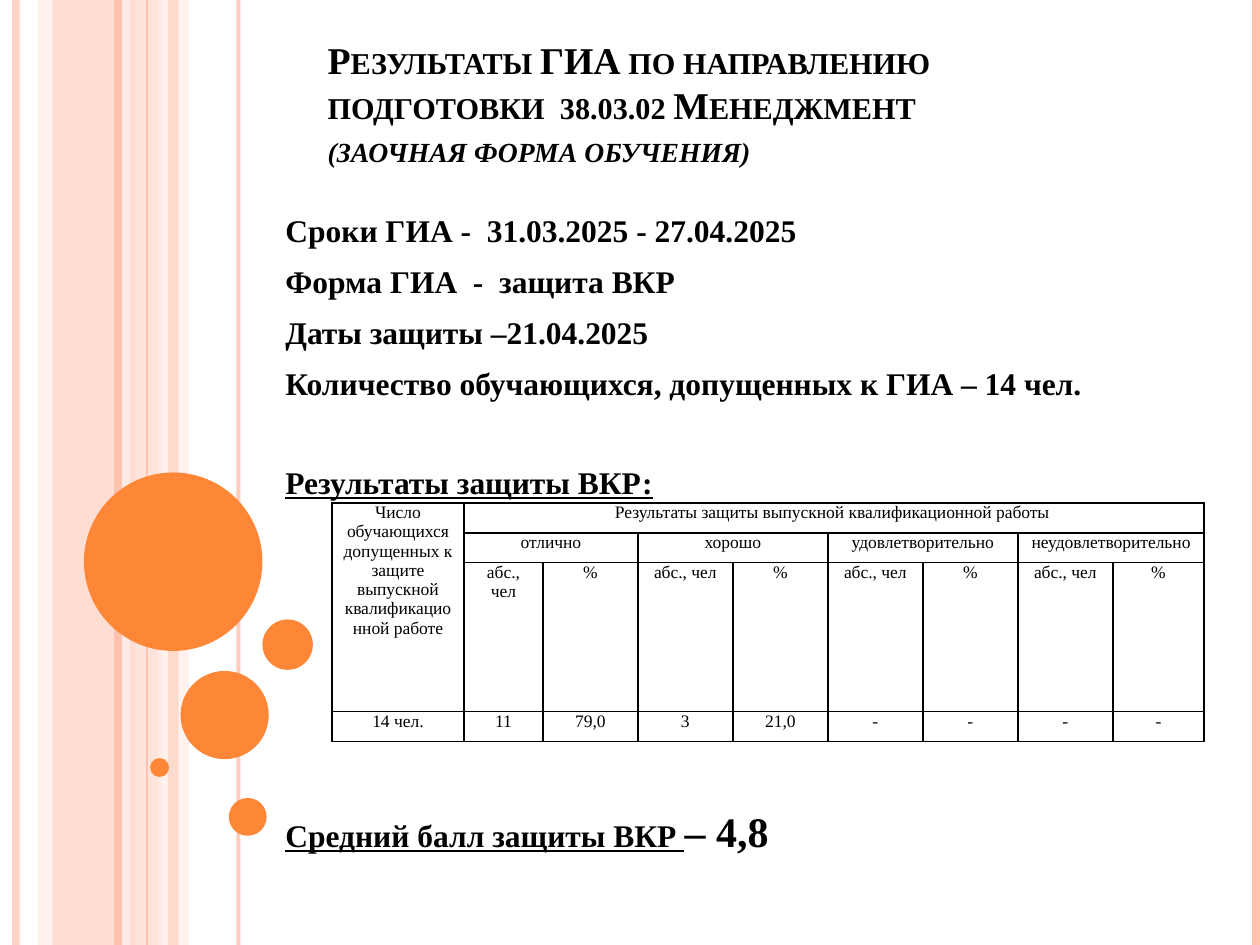
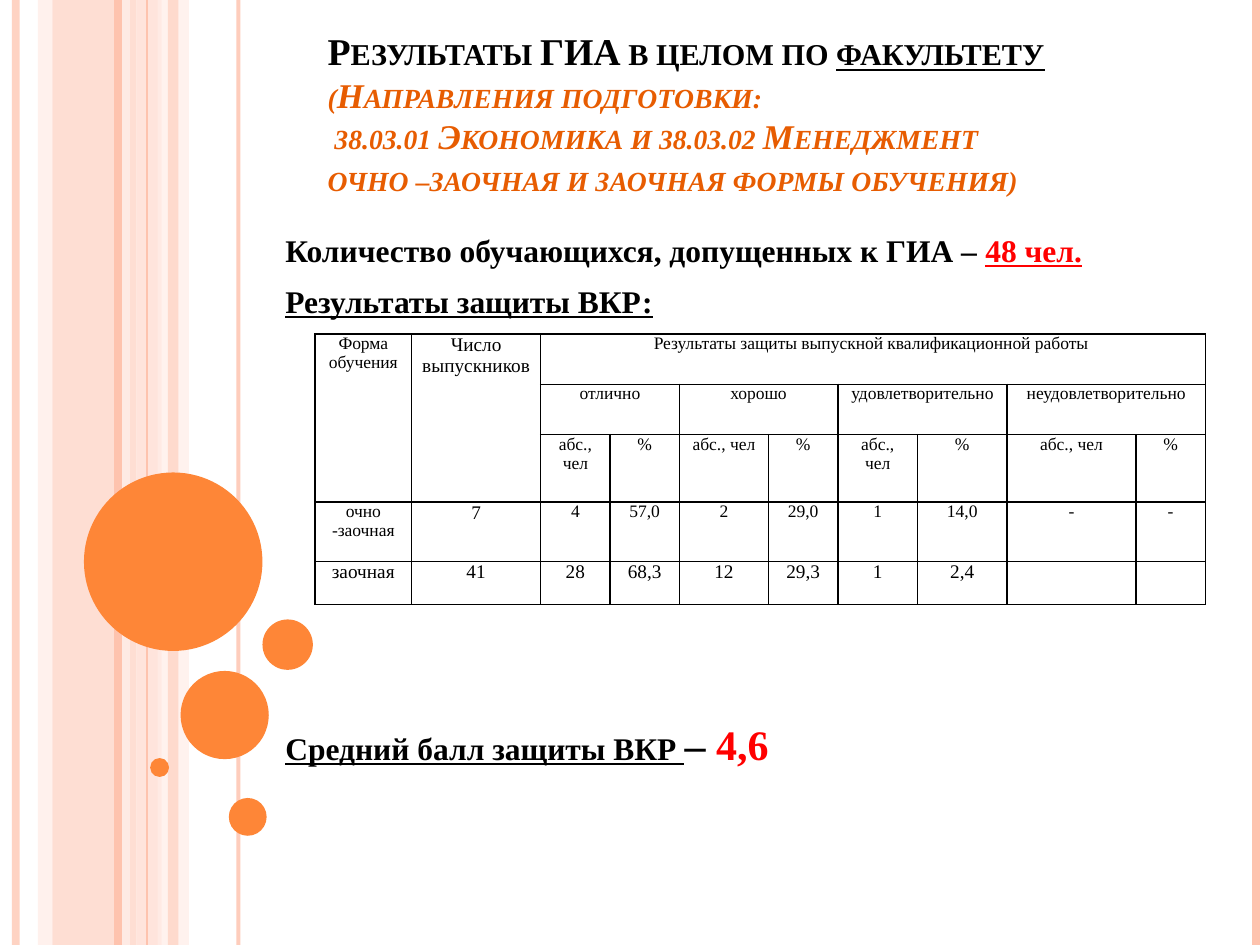
import pptx
import pptx.dml.color
import pptx.enum.shapes
import pptx.enum.text
import pptx.oxml
import pptx.oxml.ns
import pptx.util

COLS, ROWS = 120, 90
FONT = "Times New Roman"
BLACK, RED, RUST, ORANGE = "000000", "FF0000", "E75C01", "FE8637"
PEACH, PINK, PALE = "FEC3AE", "FFD9CE", "FFEDE8"

BANDS = [(5, 8, PEACH, 54), (3.6, 1.4, PINK, 36), (13, 2.4, PINK, 70), (15, 3, PALE, 71)]
RULES = [(1.5, 4.5, PEACH, 73), (12, 4.5, PALE, 83), (11.2, 4.5, PEACH, 100),
         (22.7, 2.25, PEACH, 82), (14, 0.75, PEACH, 100), (119.6, 4.5, PEACH, 100)]
STRIP = (16, 1, PEACH, 51)
DOTS = [(8, 45, 17), (17.2, 63.9, 8.4), (14.3, 72.2, 1.8), (21.8, 76, 3.6), (25, 59, 4.8)]

HEAD = "Результаты защиты выпускной квалификационной работы "
GRADES = ["отлично", "хорошо", "удовлетворительно", "неудовлетворительно"]
PAIR = ["абс., чел", "%"]
FOUND = "Результаты защиты ВКР:"
MEAN = "Средний балл защиты ВКР "
LINE = {"under": True}
NOTE = {"size": 19.8, "italic": True}
SUB = {**NOTE, "color": RUST}


def shade(text):
    return pptx.dml.color.RGBColor.from_string(text)


def fade(shape, share):
    if share < 100:
        tint = shape.element.xpath("./p:spPr//a:srgbClr")[0]
        mark = pptx.oxml.parse_xml(
            f'<a:alpha {pptx.oxml.ns.nsdecls("a")} val="{share * 1000}"/>')
        tint.append(mark)


class Deck:
    def __init__(self):
        self.show = pptx.Presentation()
        self.show.slide_width = pptx.util.Inches(10)
        self.show.slide_height = pptx.util.Inches(7.5)
        self.base = self.show.slide_layouts[5]
        self.slide = None

    def x(self, cols):
        return round(self.show.slide_width * cols / COLS)

    def y(self, rows):
        return round(self.show.slide_height * rows / ROWS)

    def box(self, left, top, width, height):
        return self.x(left), self.y(top), self.x(width), self.y(height)

    def page(self):
        self.slide = self.show.slides.add_slide(self.base)

    def block(self, kind, place, color, share=100):
        shape = self.slide.shapes.add_shape(kind, *self.box(*place))
        shape.shadow.inherit = False
        shape.fill.solid()
        shape.fill.fore_color.rgb = shade(color)
        shape.line.fill.background()
        fade(shape, share)
        return shape

    def rule(self, left, width, color, share):
        line = self.slide.shapes.add_connector(
            pptx.enum.shapes.MSO_CONNECTOR.STRAIGHT,
            self.x(left), 0, self.x(left), self.y(ROWS))
        line.line.width = pptx.util.Pt(width)
        line.line.color.rgb = shade(color)
        fade(line, share)
        line.element.spPr.append(
            pptx.oxml.parse_xml(f'<a:effectLst {pptx.oxml.ns.nsdecls("a")}/>'))
        return line

    def scene(self):
        kinds = pptx.enum.shapes.MSO_SHAPE

        def band(left, width, color, share):
            return self.block(kinds.RECTANGLE, (left, 0, width, ROWS), color, share)

        parts = [band(*item) for item in BANDS]
        parts += [self.rule(*item) for item in RULES]
        parts.append(band(*STRIP))
        parts += [self.block(kinds.OVAL, (left, top, size, size), ORANGE)
                  for left, top, size in DOTS]
        tree = self.base.shapes.element
        for rank, part in enumerate(parts):
            part.element.xpath(".//p:cNvPr")[0].set("id", str(100 + rank))
            tree.insert(2 + rank, part.element)

    def run(self, para, text, size, color=BLACK, bold=True, italic=False, under=False):
        run = para.add_run()
        run.text = text
        font = run.font
        font.name = FONT
        font.size = pptx.util.Pt(size)
        font.color.rgb = shade(color)
        font.bold, font.italic, font.underline = bold, italic, under

    def prose(self, frame, lines, size, align, **look):
        for rank, (gap, runs) in enumerate(lines):
            para = frame.add_paragraph() if rank else frame.paragraphs[0]
            para.alignment = align
            para.space_before = pptx.util.Pt(gap)
            for text, extra in runs:
                self.run(para, text, **{"size": size, **look, **extra})

    def title(self, height, lines):
        shape = self.slide.shapes.title
        shape.left, shape.top, shape.width, shape.height = self.box(30, 2.5, 81, height)
        frame = shape.text_frame
        frame.word_wrap = True
        frame.auto_size = pptx.enum.text.MSO_AUTO_SIZE.NONE
        frame.vertical_anchor = pptx.enum.text.MSO_ANCHOR.BOTTOM
        frame.margin_right = self.x(4)
        self.prose(frame, [(0, runs) for runs in lines], 21.6,
                   pptx.enum.text.PP_ALIGN.LEFT)
        for look in shape.element.xpath(".//a:rPr"):
            look.set("cap", "small")

    def body(self, top, lines):
        shape = self.slide.shapes.add_textbox(*self.box(26, top, 91.6, 83.6 - top))
        shape.text_frame.word_wrap = True
        self.prose(shape.text_frame, lines, 18, pptx.enum.text.PP_ALIGN.LEFT)

    def table(self, left, top, cols, rows, cells, spans, sizes):
        frame = self.slide.shapes.add_table(
            len(rows), len(cols), *self.box(left, top, sum(cols), sum(rows)))
        table = frame.table
        table.first_row = table.horz_banding = False
        for col, width in zip(table.columns, cols):
            col.width = self.x(width)
        for row, height in zip(table.rows, rows):
            row.height = self.y(height)
        for r, c, down, over in spans:
            table.cell(r, c).merge(table.cell(r + down - 1, c + over - 1))
        for r, texts in enumerate(cells):
            for c, text in enumerate(texts):
                cell = table.cell(r, c)
                cell.margin_left = cell.margin_right = self.x(0.85)
                cell.margin_top = cell.margin_bottom = 0
                cell.fill.background()
                if text:
                    lines = [(0, [(part, {})]) for part in text.split("\n")]
                    self.prose(cell.text_frame, lines, sizes.get((r, c), 10),
                               pptx.enum.text.PP_ALIGN.CENTER, bold=False)
        for look in frame.element.xpath(".//a:tcPr"):
            for rank, side in enumerate("LRTB"):
                look.insert(rank, pptx.oxml.parse_xml(
                    f'<a:ln{side} {pptx.oxml.ns.nsdecls("a")} w="12700"><a:solidFill>'
                    f'<a:srgbClr val="{BLACK}"/></a:solidFill></a:ln{side}>'))

    def marks(self, left, top, cols, rows, heads, data, sizes):
        lead = len(heads)
        blank = [""] * lead
        grades = [text for grade in GRADES for text in (grade, "")]
        cells = [heads + [HEAD] + [""] * 7, blank + grades, blank + PAIR * 4] + data
        spans = [(0, c, 3, 1) for c in range(lead)] + [(0, lead, 1, 8)]
        spans += [(1, lead + 2 * n, 1, 2) for n in range(4)]
        self.table(left, top, cols, rows, cells, spans, sizes)


def main():
    deck = Deck()
    deck.page()
    deck.scene()
    deck.title(14.2, [
        [("Результаты ГИА по направлению подготовки  38.03.02 Менеджмент", {})],
        [("(заочная форма обучения)", NOTE)]])
    deck.body(19.5, [
        (0, [("Сроки ГИА -  31.03.2025 - 27.04.2025", {})]),
        (7.6, [("Форма ГИА  -  защита ВКР", {})]),
        (7.6, [("Даты защиты –21.04.2025", {})]),
        (7.6, [("Количество обучающихся, допущенных к ГИА – 14 чел.", {})]),
        (35, [(FOUND, LINE)]),
        (174, [(MEAN, LINE), ("– 4,8", {"size": 24})])])
    deck.marks(31.6, 47.9, [12.6, 7.5] + [9.05] * 6 + [8.7], [2.84, 2.84, 14.2, 2.84],
               ["Число обучающихся допущенных к защите выпускной квалификационной работе"],
               [["14 чел.", "11", "79,0", "3", "21,0"] + ["-"] * 4], {})

    deck.page()
    deck.title(17, [
        [("Результаты ГИА в целом по ", {}), ("факультету", LINE)],
        [("(Направления подготовки:", SUB)],
        [(" 38.03.01 Экономика и 38.03.02 Менеджмент", SUB)],
        [("очно –заочная и заочная формы обучения)", SUB)]])
    deck.body(21.4, [
        (0, [("Количество обучающихся, допущенных к ГИА – ", {}),
             ("48 чел.", {"color": RED, "under": True})]),
        (7.6, [(FOUND, LINE)]),
        (228, [(MEAN, LINE), ("– ", {"size": 24}), ("4,6", {"size": 24, "color": RED})])])
    sizes = {(0, 1): 11, (3, 1): 11, **{(4, c): 11 for c in range(8)}}
    deck.marks(30, 31.8, [9.2, 12.3, 6.6, 6.6, 8.5, 6.6, 7.6, 8.5, 12.3, 6.6],
               [4.8, 4.8, 6.4, 5.7, 4.1], ["Форма обучения", "Число\nвыпускников"],
               [["очно -заочная", "7", "4", "57,0", "2", "29,0", "1", "14,0", "-", "-"],
                ["заочная", "41", "28", "68,3", "12", "29,3", "1", "2,4", "", ""]], sizes)
    deck.show.save("out.pptx")


if __name__ == "__main__":
    main()
